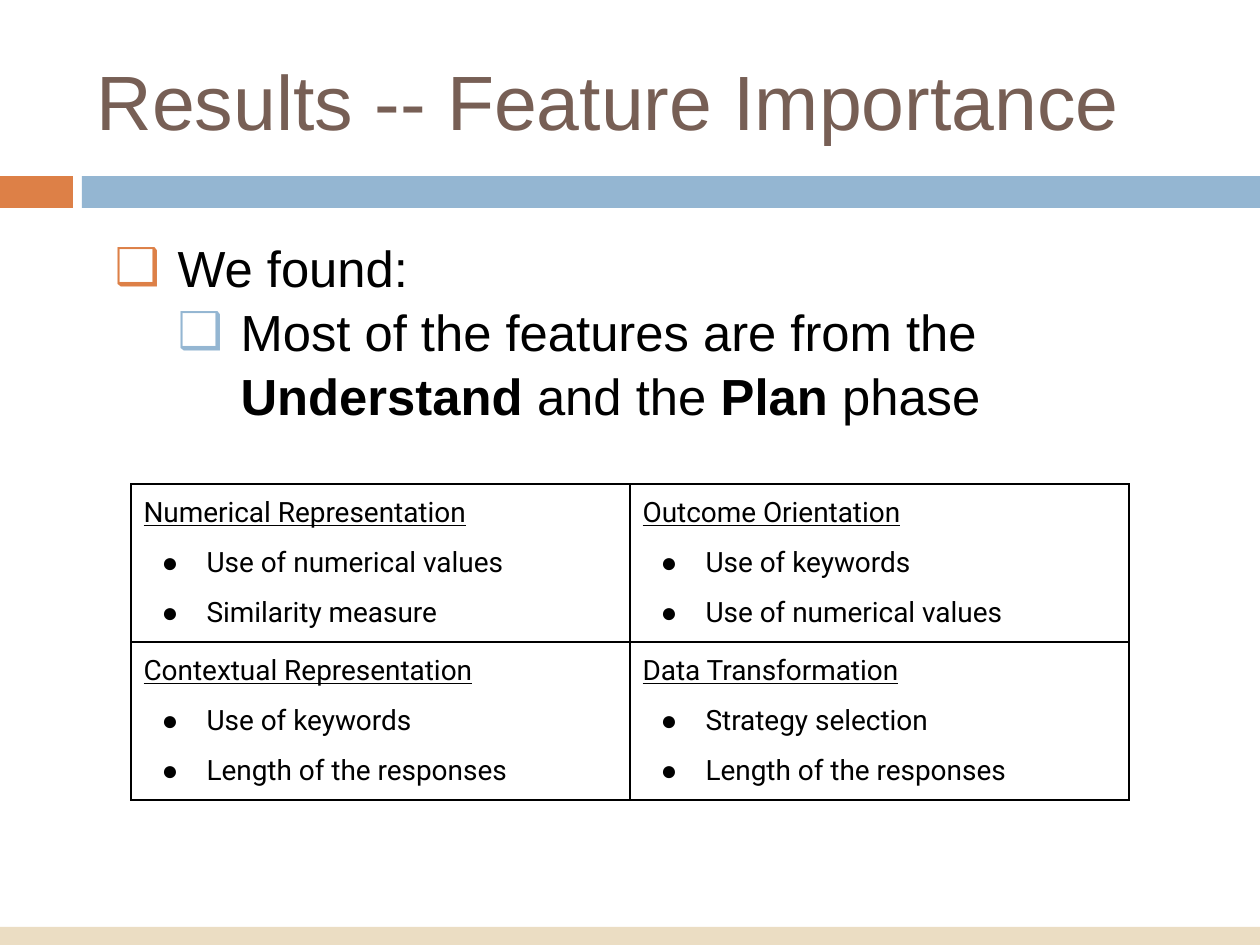
import pptx
import pptx.dml.color
import pptx.enum.shapes
import pptx.enum.text
import pptx.oxml
import pptx.oxml.ns
import pptx.util

PX = 914400 // 126
INSET = 0.1
COLORS = {
    "accent": "DD8047",
    "band": "94B6D2",
    "footer": "EBDDC3",
    "title": "775F55",
    "ink": "000000",
}
BARS = [
    ("accent", (0, 176, 73, 32)),
    ("band", (82, 176, 1178, 32)),
    ("footer", (0, 927, 1260, 18)),
]
FINDINGS = [
    (0, "accent", 81, [("We found:", False)]),
    (1, "band", 144, [
        ("Most of the features are from the ", False),
        ("Understand", True),
        (" and the ", False),
        ("Plan", True),
        (" phase", False),
    ]),
]
FEATURES = [
    [
        ("Numerical Representation", ["Use of numerical values", "Similarity measure"]),
        ("Outcome Orientation", ["Use of keywords", "Use of numerical values"]),
    ],
    [
        ("Contextual Representation", ["Use of keywords", "Length of the responses"]),
        ("Data Transformation", ["Strategy selection", "Length of the responses"]),
    ],
]


def px(*lengths):
    """Turn whole pixels into EMU."""
    return [length * PX for length in lengths]


def color(key):
    """Look up a colour of the palette."""
    return pptx.dml.color.RGBColor.from_string(COLORS[key])


def apply(target, **values):
    """Set each given attribute on the target."""
    for attribute, value in values.items():
        setattr(target, attribute, value)


def add_element(parent, tag, content="", **attributes):
    """Append a DrawingML element to the parent."""
    listed = "".join(f' {key}="{value}"' for key, value in attributes.items())
    namespace = pptx.oxml.ns.nsdecls("a")
    parent.append(pptx.oxml.parse_xml(f"<a:{tag} {namespace}{listed}>{content}</a:{tag}>"))


def add_run(paragraph, words, size, face, ink="ink", **style):
    """Add formatted words to a paragraph."""
    run = paragraph.add_run()
    run.text = words
    apply(run.font, size=pptx.util.Pt(size), name=face, **style)
    run.font.color.rgb = color(ink)


def set_bullet(paragraph, mark, ink, left, hanging):
    """Give a paragraph a coloured bullet with a hanging indent."""
    properties = paragraph._p.get_or_add_pPr()
    properties.set("marL", str(left * PX))
    properties.set("indent", str(-hanging * PX))
    add_element(properties, "buClr", f'<a:srgbClr val="{COLORS[ink]}"/>')
    add_element(properties, "buSzPct", val="100000")
    add_element(properties, "buFont", typeface="Arial")
    add_element(properties, "buChar", char=mark)


def add_bar(slide, ink, box):
    """Draw a plain coloured bar."""
    bar = slide.shapes.add_shape(pptx.enum.shapes.MSO_SHAPE.RECTANGLE, *px(*box))
    bar.shadow.inherit = False
    bar.fill.solid()
    bar.fill.fore_color.rgb = color(ink)
    bar.line.fill.background()


def place_text(placeholder, box, anchor):
    """Move a placeholder and return its text frame."""
    apply(placeholder, **dict(zip(("left", "top", "width", "height"), px(*box))))
    margins = ("margin_left", "margin_top", "margin_right", "margin_bottom")
    frame = placeholder.text_frame
    apply(frame, word_wrap=True, vertical_anchor=anchor,
          auto_size=pptx.enum.text.MSO_AUTO_SIZE.NONE,
          **dict.fromkeys(margins, pptx.util.Inches(INSET)))
    return frame


def fill_title(slide):
    """Write the slide title."""
    frame = place_text(slide.shapes.title, (84, 21, 1134, 158),
                       pptx.enum.text.MSO_ANCHOR.MIDDLE)
    heading = frame.paragraphs[0]
    heading.alignment = pptx.enum.text.PP_ALIGN.LEFT
    add_run(heading, "Results -- Feature Importance", 44, "Arial", "title")


def fill_findings(slide):
    """Write the list of findings."""
    frame = place_text(slide.placeholders[1], (84, 221, 1176, 624),
                       pptx.enum.text.MSO_ANCHOR.TOP)
    for index, (level, ink, left, pieces) in enumerate(FINDINGS):
        finding = frame.add_paragraph() if index else frame.paragraphs[0]
        apply(finding, level=level, space_before=pptx.util.Pt(0), line_spacing=1.05)
        set_bullet(finding, "❑", ink, left, 63)
        for words, bold in pieces:
            add_run(finding, words, 29, "Arial", bold=bold)


def fill_cell(cell, heading, features):
    """Write an underlined heading and its features in a bordered cell."""
    for side in ("lnL", "lnR", "lnT", "lnB"):
        ink = f'<a:solidFill><a:srgbClr val="{COLORS["ink"]}"/></a:solidFill>'
        add_element(cell._tc.get_or_add_tcPr(), side, ink, w=pptx.util.Pt(0.75))
    cell.fill.background()
    margins = ("margin_left", "margin_top", "margin_right", "margin_bottom")
    apply(cell, **dict.fromkeys(margins, pptx.util.Inches(INSET)))
    frame = cell.text_frame
    add_run(frame.paragraphs[0], heading, 16, "Roboto", underline=True, bold=False)
    for feature in features:
        item = frame.add_paragraph()
        item.space_before = pptx.util.Pt(10)
        set_bullet(item, "●", "ink", 63, 45)
        add_run(item, feature, 16, "Roboto", bold=False)
    item.space_after = pptx.util.Pt(10)


def add_feature_table(slide):
    """Add the table of important features."""
    table = slide.shapes.add_table(2, 2, *px(131, 484, 998, 316)).table
    apply(table, first_row=False, horz_banding=False)
    for row, groups in enumerate(FEATURES):
        for column, (heading, features) in enumerate(groups):
            fill_cell(table.cell(row, column), heading, features)


def main():
    """Build and save the slide."""
    deck = pptx.Presentation()
    apply(deck, slide_width=pptx.util.Inches(10), slide_height=pptx.util.Inches(7.5))
    slide = deck.slides.add_slide(deck.slide_layouts[1])
    for ink, box in BARS:
        add_bar(slide, ink, box)
    fill_title(slide)
    add_feature_table(slide)
    fill_findings(slide)
    deck.save("out.pptx")


if __name__ == "__main__":
    main()
